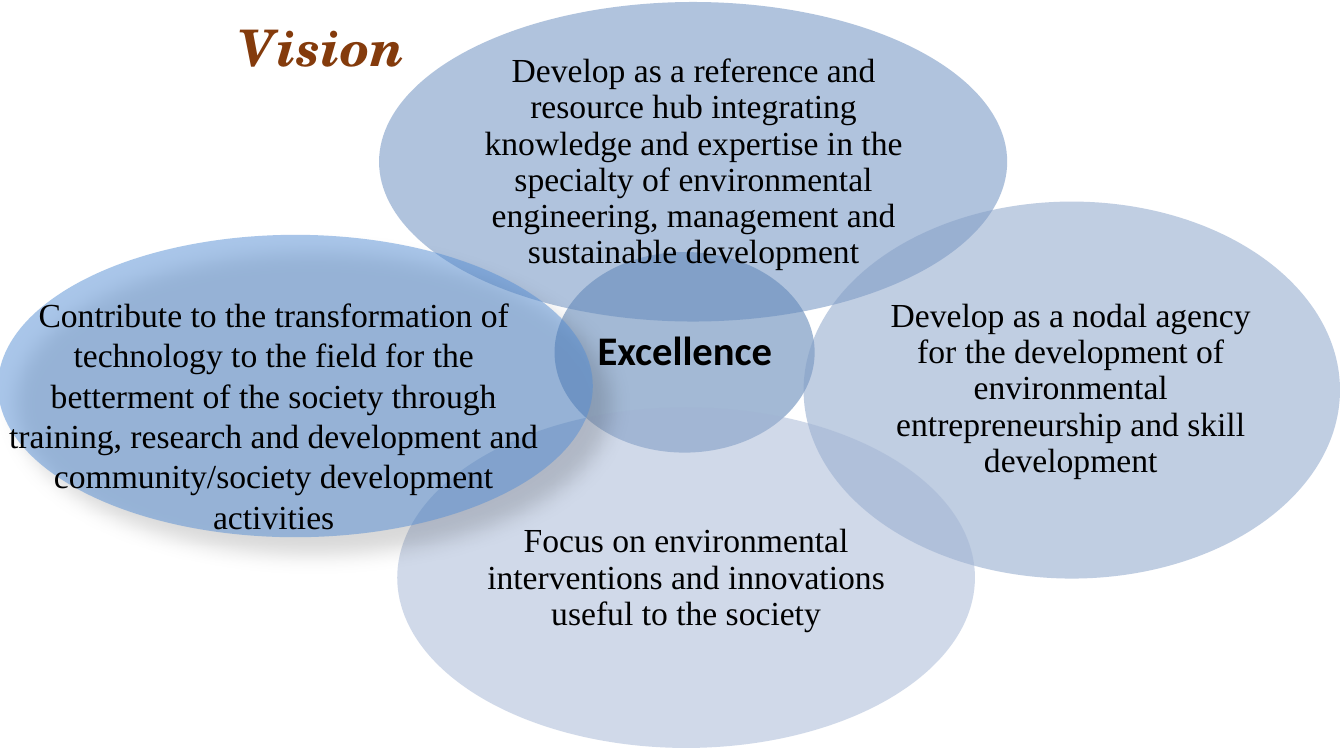
import pptx
import pptx.dml.color
import pptx.enum.shapes
import pptx.enum.text
import pptx.oxml
import pptx.oxml.ns
import pptx.util
from pptx.util import Inches

RGBColor = pptx.dml.color.RGBColor
BLACK = RGBColor(0x00, 0x00, 0x00)
BROWN = RGBColor(0x84, 0x3B, 0x0C)
CORE_BLUE = RGBColor(0x48, 0x75, 0xAC)
TOP_BLUE = RGBColor(0x63, 0x89, 0xBC)
RIGHT_BLUE = RGBColor(0x83, 0x9E, 0xC7)
BOTTOM_BLUE = RGBColor(0xA2, 0xB4, 0xD4)
LEFT_BLUE = RGBColor(0x55, 0x8E, 0xD5)

MIDDLE = pptx.enum.text.MSO_ANCHOR.MIDDLE
TOP = pptx.enum.text.MSO_ANCHOR.TOP
BODY = {"name": "Times New Roman", "size": pptx.util.Pt(24)}
CORE = {"name": "Calibri", "size": pptx.util.Pt(29), "bold": True}
TITLE = {"name": "TeX Gyre Schola", "size": pptx.util.Pt(36), "bold": True, "italic": True}

PETALS = [
    ((5.5, 2.5, 2.58, 1.99), CORE_BLUE, (5.88, 2.79, 1.83, 1.41), CORE, 0.9, "Excellence"),
    ((3.76, 0.02, 6.23, 3.17), TOP_BLUE, (4.68, 0.49, 4.4, 2.24), BODY, 0.9,
     "Develop as a reference and resource hub integrating knowledge and expertise in the "
     "specialty of environmental engineering, management and sustainable development"),
    ((7.97, 2, 5.32, 3.74), RIGHT_BLUE, (8.74, 2.54, 3.76, 2.64), BODY, 0.9,
     "Develop as a nodal agency for the development of environmental entrepreneurship "
     "and skill development"),
    ((3.94, 4.04, 5.73, 3.38), BOTTOM_BLUE, (4.78, 4.54, 4.05, 2.39), BODY, 0.9,
     "Focus on environmental interventions and innovations useful to the society"),
    ((-0.02, 2.33, 5.9, 3), LEFT_BLUE, (-0.04, 3.05, 5.51, 2.13), BODY, 1.0,
     "Contribute to the transformation of technology to the field for the betterment of the "
     "society through training, research and development and community/society "
     "development activities"),
]


def add_ellipse(page, place, color):
    """Add a half-transparent ellipse without outline or shadow."""
    ellipse = page.shapes.add_shape(pptx.enum.shapes.MSO_SHAPE.OVAL, *map(Inches, place))
    ellipse.shadow.inherit = False
    ellipse.fill.solid()
    ellipse.fill.fore_color.rgb = color
    ellipse.line.fill.background()
    tint = ellipse.fill._xPr.find(".//" + pptx.oxml.ns.qn("a:srgbClr"))
    tint.append(pptx.oxml.parse_xml(f'<a:alpha {pptx.oxml.ns.nsdecls("a")} val="50000"/>'))
    return ellipse


def add_soft_shadow(shape):
    """Give a shape a blurred shadow to its lower right."""
    effects = shape._element.spPr.find(pptx.oxml.ns.qn("a:effectLst"))
    effects.append(pptx.oxml.parse_xml(
        f'<a:outerShdw {pptx.oxml.ns.nsdecls("a")} blurRad="{pptx.util.Pt(15)}" '
        f'dist="{pptx.util.Pt(18)}" dir="2700000" algn="tl" rotWithShape="0">'
        '<a:srgbClr val="000000"><a:alpha val="30000"/></a:srgbClr></a:outerShdw>'))


def add_text(page, place, text, style, color=BLACK, anchor=MIDDLE, margin=0.03, spacing=1.0):
    """Add a centred wrapping text box and return its span."""
    frame = page.shapes.add_textbox(*map(Inches, place)).text_frame
    frame.word_wrap = True
    frame.vertical_anchor = anchor
    for side in ("left", "top", "right", "bottom"):
        setattr(frame, f"margin_{side}", Inches(margin))
    para = frame.paragraphs[0]
    para.alignment = pptx.enum.text.PP_ALIGN.CENTER
    para.line_spacing = spacing
    span = para.add_run()
    span.text = text
    for name, value in style.items():
        setattr(span.font, name, value)
    span.font.color.rgb = color
    return span


def main():
    """Build the vision slide and save it."""
    deck = pptx.Presentation()
    deck.slide_width, deck.slide_height = Inches(13.33), Inches(7.5)
    page = deck.slides.add_slide(deck.slide_layouts[6])
    for place, color, text_place, style, spacing, text in PETALS:
        ellipse = add_ellipse(page, place, color)
        if color == LEFT_BLUE:
            title = add_text(page, (1.59, 0.16, 3.2, 0.62), "Vision", TITLE, BROWN, TOP, 0)
            title.font._element.set("spc", "30")
            add_soft_shadow(ellipse)
        add_text(page, text_place, text, style, spacing=spacing)
    deck.save("out.pptx")


if __name__ == "__main__":
    main()
